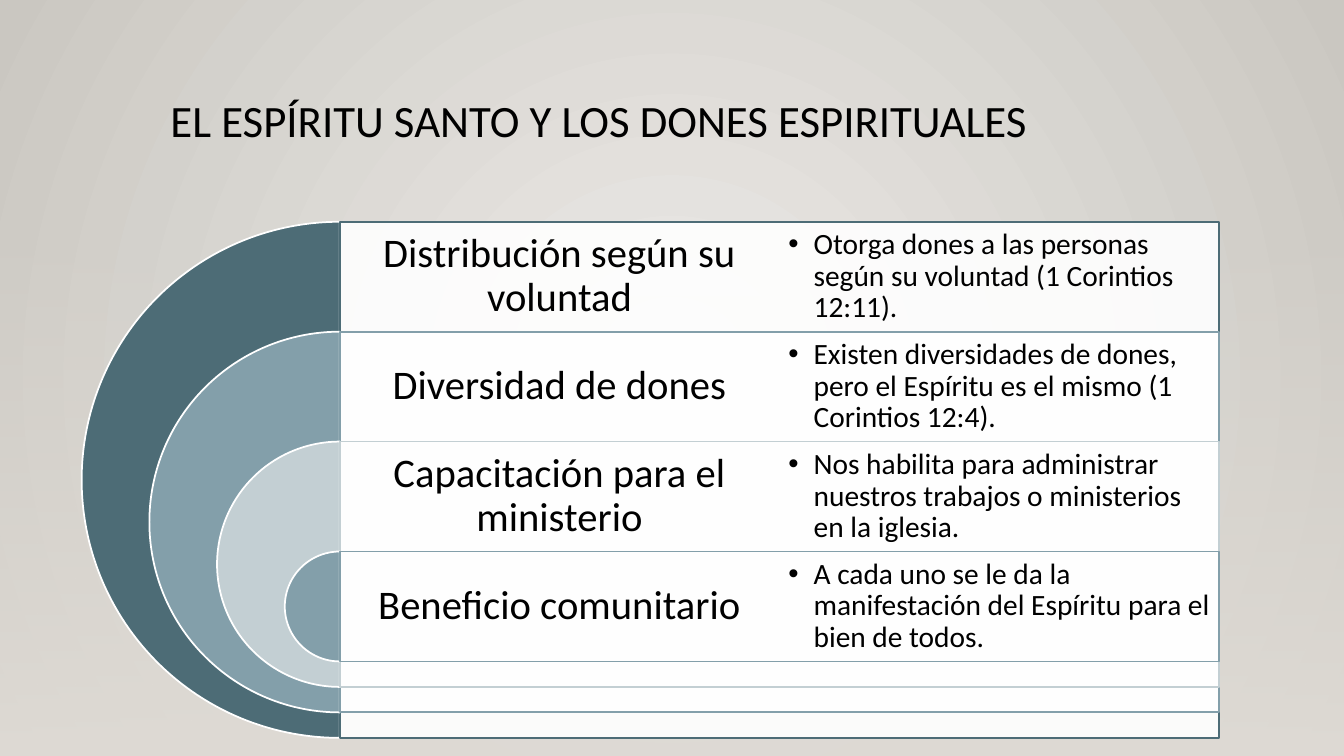
from lxml import etree
from pptx import Presentation
from pptx import util as u
from pptx.dml.color import RGBColor
from pptx.enum import shapes, text
from pptx.oxml import ns

W, H = 13.33, 7.5
BLACK = RGBColor(0x00, 0x00, 0x00)
WHITE = RGBColor(0xFF, 0xFF, 0xFF)
TEAL = RGBColor(0x4D, 0x6C, 0x76)
STEEL = RGBColor(0x83, 0x9F, 0xAA)
MIST = RGBColor(0xC3, 0xCF, 0xD3)
SAND = RGBColor(0xDF, 0xDB, 0xD5)
GLOW = RGBColor(0xEC, 0xEA, 0xE7)
EDGE = RGBColor(0xCA, 0xC7, 0xC1)

TITLE = "EL ESPÍRITU SANTO Y LOS DONES ESPIRITUALES"
GIFTS = [
    ("Distribución según su voluntad",
     "Otorga dones a las personas según su voluntad (1 Corintios 12:11).", TEAL),
    ("Diversidad de dones",
     "Existen diversidades de dones, pero el Espíritu es el mismo (1 Corintios 12:4).", STEEL),
    ("Capacitación para el ministerio",
     "Nos habilita para administrar nuestros trabajos o ministerios en la iglesia.", MIST),
    ("Beneficio comunitario",
     "A cada uno se le da la manifestación del Espíritu para el bien de todos.", STEEL),
]
ROW_SHARE = 0.213  # height of one text row within the diagram


def inches(*box):
    return [u.Inches(v) for v in box]


def add_xml(parent, tag, **attrs):
    return etree.SubElement(parent, ns.qn(tag), attrs)


def set_alpha(fill_parent, percent):
    color = fill_parent.xpath(".//a:srgbClr")[0]
    add_xml(color, "a:alpha", val=str(percent * 1000))


def set_gradient(fill, first, last):
    fill.gradient()
    for stop, color in zip(fill.gradient_stops, (first, last)):
        stop.color.rgb = color


def add_preset(s, kind, box, fill, line):
    sp = s.shapes.add_shape(kind, *inches(*box))
    sp.shadow.inherit = False
    sp.fill.solid()
    sp.fill.fore_color.rgb = fill
    sp.line.color.rgb = line
    sp.line.width = u.Pt(1.25)
    return sp


def format_text(tf, words, size, margin, anchor, align, bullet=False):
    frame = dict(word_wrap=True, auto_size=text.MSO_AUTO_SIZE.NONE, vertical_anchor=anchor)
    frame.update({f"margin_{side}": u.Inches(margin)
                  for side in ("left", "right", "top", "bottom")})
    for name, value in frame.items():
        setattr(tf, name, value)
    p = tf.paragraphs[0]
    p.alignment, p.line_spacing = align, 0.9
    if bullet:
        pPr = p._p.get_or_add_pPr()
        pPr.set("marL", str(u.Inches(0.25)))
        pPr.set("indent", str(u.Inches(-0.25)))
        add_xml(pPr, "a:buFont", typeface="Arial")
        add_xml(pPr, "a:buChar", char="•")
    r = p.add_run()
    r.text = words
    for name, value in dict(name="Calibri", size=u.Pt(size)).items():
        setattr(r.font, name, value)
    r.font.color.rgb = BLACK


def draw_background(s, box):
    # Radial glow over the whole slide
    set_gradient(s.background.fill, GLOW, EDGE)
    grad = s._element.xpath("./p:cSld/p:bg//a:gradFill")[0]
    for lin in grad.xpath("./a:lin"):
        grad.remove(lin)
    path = add_xml(grad, "a:path", path="circle")
    add_xml(path, "a:fillToRect", l="50000", t="50000", r="50000", b="50000")
    # Sand wash that fades in towards the bottom
    sp = s.shapes.add_shape(shapes.MSO_SHAPE.RECTANGLE, *inches(*box))
    sp.shadow.inherit = False
    sp.line.fill.background()
    set_gradient(sp.fill, SAND, SAND)
    sp.fill.gradient_angle = 270
    set_alpha(sp._element.spPr, 0)
    s.shapes._spTree.insert(2, sp._element)


def draw_title(s, box):
    sp = s.shapes.title
    sp.left, sp.top, sp.width, sp.height = inches(*box)
    format_text(sp.text_frame, TITLE, 32, 0.1,
                text.MSO_ANCHOR.TOP, text.PP_ALIGN.LEFT)


def draw_gifts(s, box):
    left, top, width, height = box
    axis = left + height / 2
    column = (left + width - axis) / 2
    row = height * ROW_SHARE
    step = (height - row) / (len(GIFTS) - 1)
    for i, (heading, detail, color) in enumerate(GIFTS):
        y, size = top + i * row, height - i * step
        # Left half disc
        pie = add_preset(s, shapes.MSO_SHAPE.PIE,
                         (axis - size / 2, y, size, size), color, WHITE)
        pie.adjustments[0], pie.adjustments[1] = 54, 162
        # Panel behind both text columns
        panel = add_preset(s, shapes.MSO_SHAPE.RECTANGLE,
                           (axis, y, 2 * column, size), WHITE, color)
        set_alpha(panel._element.spPr, 90)
        # Heading and detail
        head = s.shapes.add_textbox(*inches(axis, y, column, row))
        format_text(head.text_frame, heading, 29, 0.12,
                    text.MSO_ANCHOR.MIDDLE, text.PP_ALIGN.CENTER)
        body = s.shapes.add_textbox(*inches(axis + column, y, column, row))
        format_text(body.text_frame, detail, 21, 0.09,
                    text.MSO_ANCHOR.MIDDLE, text.PP_ALIGN.LEFT, bullet=True)


def main():
    prs = Presentation()
    prs.slide_width, prs.slide_height = inches(W, H)
    s = prs.slides.add_slide(prs.slide_layouts[5])
    draw_background(s, (0, 2.21, W, H - 2.21))
    draw_title(s, (1.59, 0.88, 10.5, 1.15))
    draw_gifts(s, (0.81, 2.2, 11.28, 5.12))
    prs.save("out.pptx")


if __name__ == "__main__":
    main()
